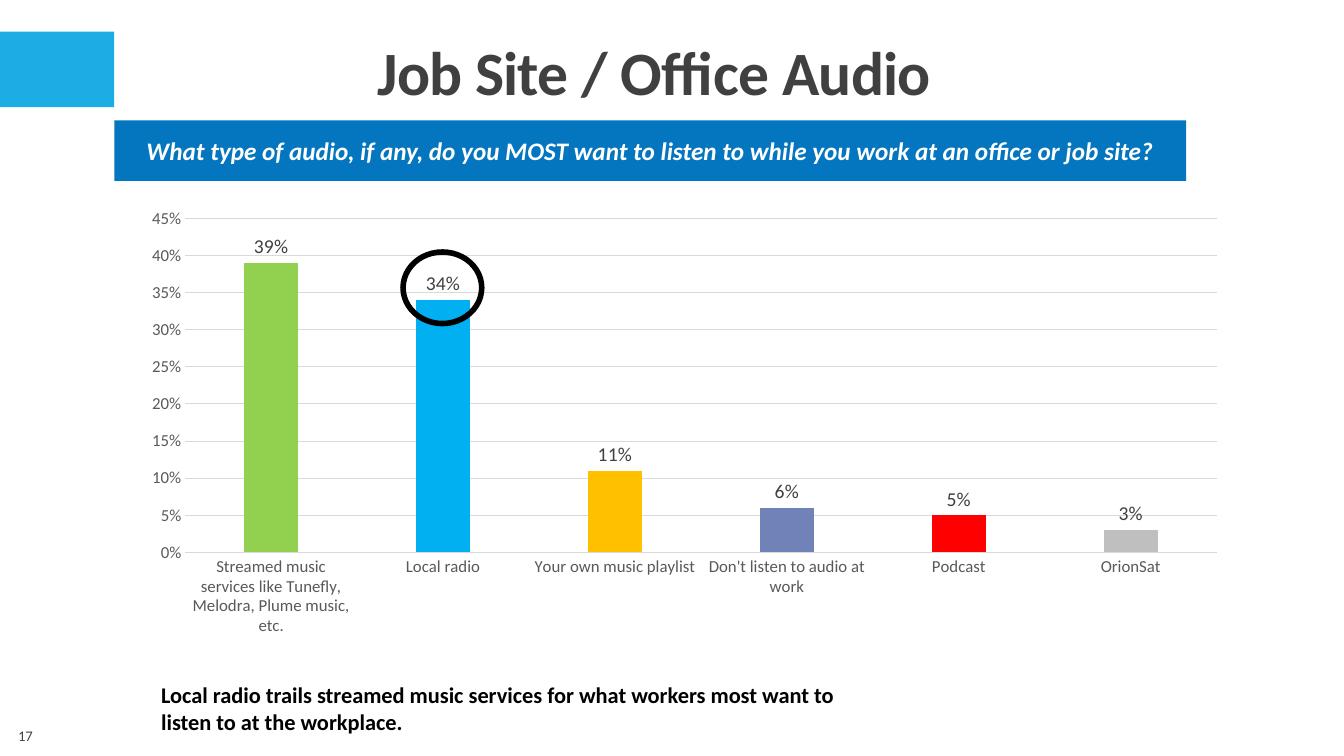
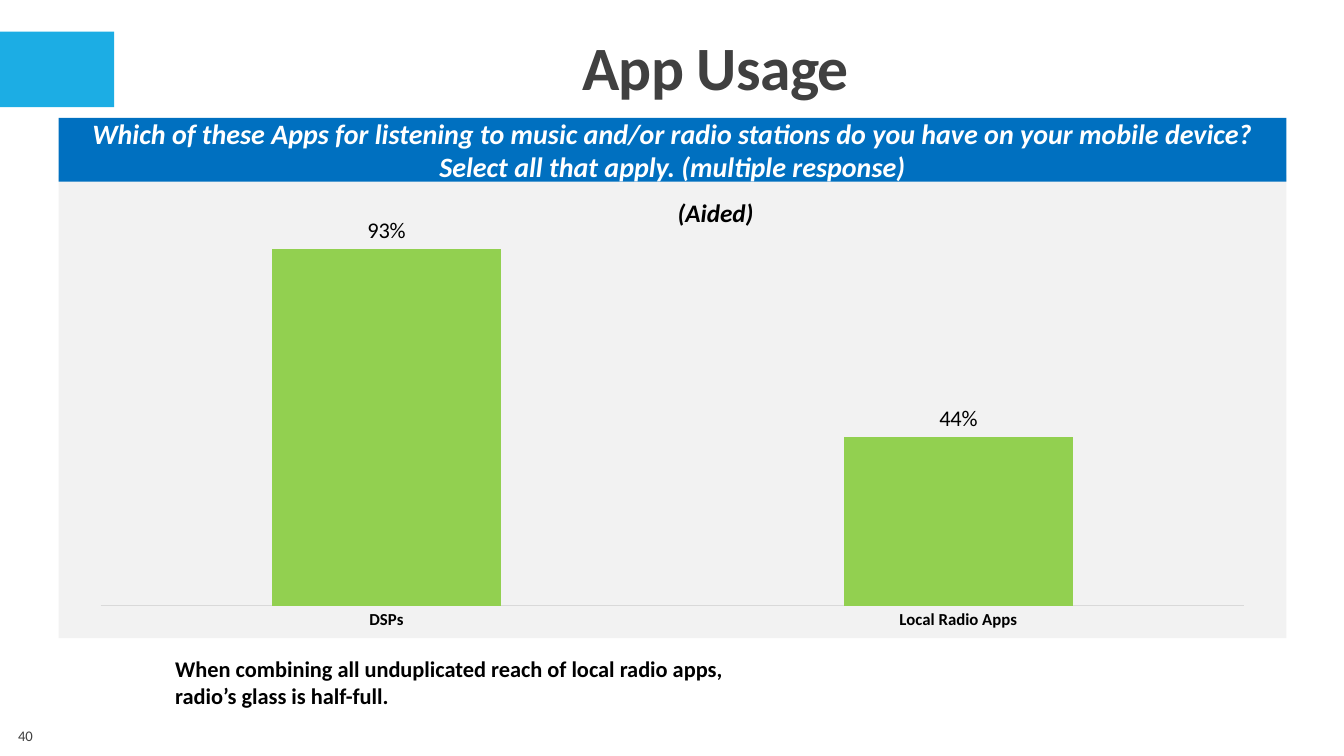
import pptx
import pptx.chart.data
import pptx.dml.color
import pptx.enum.chart
import pptx.enum.shapes
import pptx.enum.text
import pptx.util

Pt = pptx.util.Pt
RGBColor = pptx.dml.color.RGBColor
ALIGN = pptx.enum.text.PP_ALIGN
ANCHOR = pptx.enum.text.MSO_ANCHOR
SHAPE = pptx.enum.shapes.MSO_SHAPE
TICK = pptx.enum.chart.XL_TICK_MARK

FONT = "Calibri"
BLACK = RGBColor(0x00, 0x00, 0x00)
WHITE = RGBColor(0xFF, 0xFF, 0xFF)
INK = RGBColor(0x40, 0x40, 0x40)
AXIS_GRAY = RGBColor(0x59, 0x59, 0x59)
RULE_GRAY = RGBColor(0xD9, 0xD9, 0xD9)
PANEL_GRAY = RGBColor(0xF2, 0xF2, 0xF2)
ACCENT = RGBColor(0x1C, 0xAD, 0xE4)
AUDIO_BLUE = RGBColor(0x04, 0x76, 0xBF)
APP_BLUE = RGBColor(0x00, 0x70, 0xC0)
GREEN = RGBColor(0x92, 0xD0, 0x50)
SKY = RGBColor(0x00, 0xB0, 0xF0)
GOLD = RGBColor(0xFF, 0xC0, 0x00)
SLATE = RGBColor(0x71, 0x82, 0xB8)
RED = RGBColor(0xFF, 0x00, 0x00)
SILVER = RGBColor(0xBF, 0xBF, 0xBF)


def points(*lengths):
    return [Pt(length) for length in lengths]


def style_font(font, size, color, bold=False, italic=False):
    font.name = FONT
    font.size = Pt(size)
    font.color.rgb = color
    font.bold = bold
    font.italic = italic


def write(frame, text, size=16, color=BLACK, bold=True, italic=False,
          align=ALIGN.LEFT, anchor=ANCHOR.TOP, line_spacing=None, tracking=None):
    frame.word_wrap = True
    frame.auto_size = pptx.enum.text.MSO_AUTO_SIZE.NONE
    frame.vertical_anchor = anchor
    paragraph = frame.paragraphs[0]
    paragraph.alignment = align
    paragraph.line_spacing = line_spacing
    run = paragraph.add_run()
    run.text = text
    style_font(run.font, size, color, bold, italic)
    if tracking is not None:
        run.font._element.set("spc", str(tracking))


def add_text(slide, box, text, **text_format):
    write(slide.shapes.add_textbox(*points(*box)).text_frame, text, **text_format)


def add_block(slide, box, color):
    block = slide.shapes.add_shape(SHAPE.RECTANGLE, *points(*box))
    block.shadow.inherit = False
    block.fill.solid()
    block.fill.fore_color.rgb = color
    block.line.fill.background()
    return block


def add_band(slide, box, question, color, size):
    band = add_block(slide, box, color)
    write(band.text_frame, question, size=size, color=WHITE, italic=True,
          align=ALIGN.CENTER, anchor=ANCHOR.MIDDLE)


def add_ring(slide, box):
    ring = slide.shapes.add_shape(SHAPE.OVAL, *points(*box))
    ring.shadow.inherit = False
    ring.fill.background()
    ring.line.color.rgb = BLACK
    ring.line.width = Pt(4)


def add_columns(slide, box, shares, gap, overlap, maximum, label_size, label_color,
                category_color, category_bold=False):
    chart_data = pptx.chart.data.CategoryChartData(number_format="0%")
    chart_data.categories = list(shares)
    chart_data.add_series("Series 1", shares.values())
    chart = slide.shapes.add_chart(
        pptx.enum.chart.XL_CHART_TYPE.COLUMN_CLUSTERED, *points(*box), chart_data).chart
    chart.has_legend = False
    chart.has_title = False
    style_font(chart.font, 10, BLACK)

    plot = chart.plots[0]
    plot.gap_width = gap
    plot.overlap = overlap
    plot.vary_by_categories = False
    columns = plot.series[0]
    columns.format.fill.solid()
    columns.format.fill.fore_color.rgb = GREEN
    labels = columns.data_labels
    labels.show_value = True
    labels.number_format = "0%"
    labels.number_format_is_linked = False
    labels.position = pptx.enum.chart.XL_LABEL_POSITION.OUTSIDE_END
    style_font(labels.font, label_size, label_color)

    categories = chart.category_axis
    categories.major_tick_mark = TICK.NONE
    categories.minor_tick_mark = TICK.NONE
    categories.format.line.color.rgb = RULE_GRAY
    categories.format.line.width = Pt(0.75)
    style_font(categories.tick_labels.font, 12, category_color, category_bold)
    values = chart.value_axis
    values.minimum_scale = 0
    values.maximum_scale = maximum
    values.has_major_gridlines = False
    return chart


def show_scale(axis, step):
    axis.major_unit = step
    axis.major_tick_mark = TICK.NONE
    axis.minor_tick_mark = TICK.NONE
    axis.format.line.fill.background()
    axis.has_major_gridlines = True
    axis.major_gridlines.format.line.color.rgb = RULE_GRAY
    axis.major_gridlines.format.line.width = Pt(0.75)
    axis.tick_labels.number_format = "0%"
    axis.tick_labels.number_format_is_linked = False
    style_font(axis.tick_labels.font, 12, AXIS_GRAY)


def add_audio_chart(slide, box):
    left, top, width, height = box
    shares = {
        "Streamed music services like Tunefly, Melodra, Plume music, etc.": 0.39,
        "Local radio": 0.34,
        "Your own music playlist": 0.11,
        "Don't listen to audio at work": 0.06,
        "Podcast": 0.05,
        "OrionSat": 0.03,
    }
    chart = add_columns(slide, box, shares, gap=219, overlap=-27, maximum=0.45,
                        label_size=14, label_color=INK, category_color=AXIS_GRAY)
    show_scale(chart.value_axis, 0.05)
    columns = chart.plots[0].series[0]
    for index, color in enumerate((SKY, GOLD, SLATE, RED, SILVER), start=1):
        fill = columns.points[index].format.fill
        fill.solid()
        fill.fore_color.rgb = color
    add_ring(slide, (left + 195, top + 37.4, 56.2, 51.1))


def add_app_panel(slide, box):
    left, top, width, height = box
    add_block(slide, box, PANEL_GRAY)
    add_band(slide, (left, top - 41, width, 45.4),
             "Which of these Apps for listening to music and/or radio stations do you have "
             "on your mobile device? Select all that apply. (multiple response)",
             APP_BLUE, 20)
    chart = add_columns(slide, (left + 13, top + 27.4, width - 26, height - 27.4),
                        {"DSPs": 0.93, "Local Radio Apps": 0.44},
                        gap=150, overlap=-25, maximum=1, label_size=16, label_color=BLACK,
                        category_color=BLACK, category_bold=True)
    chart.value_axis.visible = False
    add_text(slide, (left + 382.3, top + 12.2, 174.2, 29), "(Aided)",
             size=18, italic=True, align=ALIGN.CENTER)


def start_slide(deck, title, title_box, number):
    slide = deck.slides.add_slide(deck.slide_layouts[5])
    heading = slide.shapes.title
    heading.left, heading.top, heading.width, heading.height = points(*title_box)
    write(heading.text_frame, title, size=44, color=INK, align=ALIGN.CENTER,
          anchor=ANCHOR.BOTTOM, line_spacing=0.9, tracking=-50)
    add_block(slide, (0, 22.6, 81.6, 54), ACCENT)
    add_text(slide, (0, 511.2, 30.6, 28.8), number, size=10.5, color=INK, bold=False,
             align=ALIGN.RIGHT, anchor=ANCHOR.MIDDLE)
    return slide


def build_audio_slide(deck):
    slide = start_slide(deck, "Job Site / Office Audio", (71.3, 27.4, 792, 54), "17")
    add_band(slide, (81.6, 86, 765.6, 43.2),
             "What type of audio, if any, do you MOST want to listen to while you work "
             "at an office or job site?", AUDIO_BLUE, 18)
    add_audio_chart(slide, (92.9, 142.6, 792, 318.2))
    add_text(slide, (108, 483.1, 534.2, 46),
             "Local radio trails streamed music services for what workers most want to "
             "listen to at the workplace.")


def build_app_slide(deck):
    slide = start_slide(deck, "App Usage", (79.2, 23.8, 864, 54), "40")
    add_app_panel(slide, (41.8, 125.3, 877, 330.5))
    add_text(slide, (118.1, 464.4, 430.6, 46),
             "When combining all unduplicated reach of local radio apps, "
             "radio’s glass is half-full.")


def main():
    deck = pptx.Presentation()
    deck.slide_width, deck.slide_height = points(960, 540)
    build_audio_slide(deck)
    build_app_slide(deck)
    deck.save("out.pptx")


if __name__ == "__main__":
    main()
